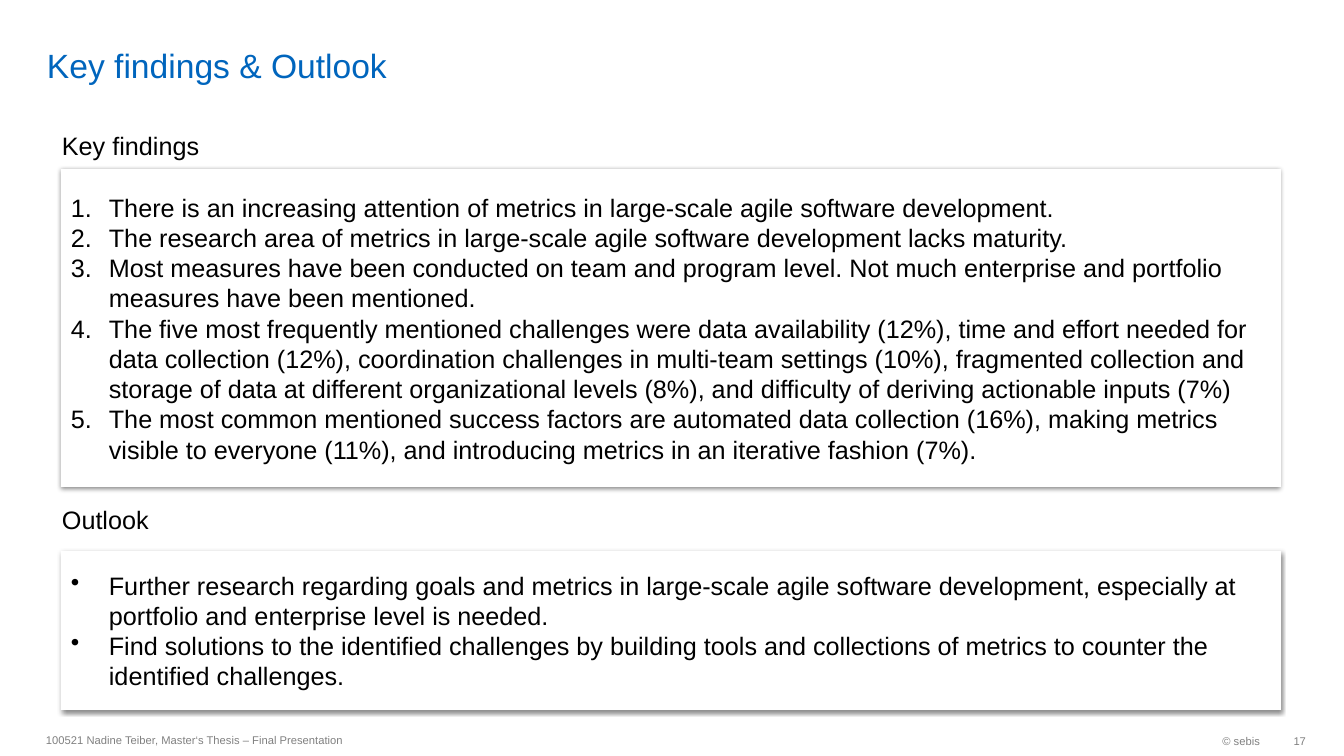
"""Build the key findings and outlook slide of a thesis presentation."""
from pptx import Presentation
from pptx.dml.color import RGBColor
from pptx.enum.shapes import MSO_SHAPE
from pptx.enum.text import MSO_ANCHOR, PP_ALIGN
from pptx.oxml import parse_xml
from pptx.oxml.ns import nsdecls, qn
from pptx.util import Emu, Pt

PIXEL = 914400 / 100.8
HANGING = 38
SHADOW = (
    f'<a:outerShdw {nsdecls("a")} blurRad="44450" dist="13970" dir="5400000" '
    'algn="t" rotWithShape="0">'
    '<a:srgbClr val="000000"><a:alpha val="45000"/></a:srgbClr></a:outerShdw>'
)
NUMBERS = f'<a:buAutoNum {nsdecls("a")} type="arabicPeriod"/>'
DOTS = f'<a:buChar {nsdecls("a")} char="•"/>'


def px(*lengths):
    return [Emu(round(length * PIXEL)) for length in lengths]


def style(para, size, color, align=PP_ALIGN.LEFT):
    para.alignment = align
    para.font.name = "Arial"
    para.font.size = Pt(size)
    para.font.color.rgb = RGBColor.from_string(color)


deck = Presentation()
deck.slide_width, deck.slide_height = px(1344, 756)
page = deck.slides.add_slide(deck.slide_layouts[6])

panels = [
    (169, 318, NUMBERS, [
        "There is an increasing attention of metrics in large-scale agile software development.",
        "The research area of metrics in large-scale agile software development lacks maturity.",
        "Most measures have been conducted on team and program level. Not much enterprise and "
        "portfolio measures have been mentioned.",
        "The five most frequently mentioned challenges were data availability (12%), time and "
        "effort needed for data collection (12%), coordination challenges in multi-team settings "
        "(10%), fragmented collection and storage of data at different organizational levels (8%), "
        "and difficulty of deriving actionable inputs (7%)",
        "The most common mentioned success factors are automated data collection (16%), making "
        "metrics visible to everyone (11%), and introducing metrics in an iterative fashion (7%).",
    ]),
    (551, 159, DOTS, [
        "Further research regarding goals and metrics in large-scale agile software development, "
        "especially at portfolio and enterprise level is needed.",
        "Find solutions to the identified challenges by building tools and collections of metrics "
        "to counter the identified challenges.",
    ]),
]
for top, height, bullet, items in panels:
    panel = page.shapes.add_shape(MSO_SHAPE.RECTANGLE, *px(61, top, 1220, height))
    panel.fill.solid()
    panel.fill.fore_color.rgb = RGBColor.from_string("FFFFFF")
    panel.line.fill.background()
    panel.shadow.inherit = False
    panel.element.spPr.find(qn("a:effectLst")).append(parse_xml(SHADOW))
    frame = panel.text_frame
    frame.vertical_anchor = MSO_ANCHOR.MIDDLE
    frame.text = "\n".join(items)
    for para in frame.paragraphs:
        properties = para._p.get_or_add_pPr()
        indent = px(HANGING)[0]
        properties.set("marL", str(indent))
        properties.set("indent", str(-indent))
        properties.append(parse_xml(bullet))
        style(para, 18, "000000")

TOP, MIDDLE, BOTTOM = MSO_ANCHOR.TOP, MSO_ANCHOR.MIDDLE, MSO_ANCHOR.BOTTOM
LEFT, RIGHT = PP_ALIGN.LEFT, PP_ALIGN.RIGHT
labels = [
    ("Key findings & Outlook", (37, 5, 1167, 80), (10, 0, 10, 0), BOTTOM, LEFT, 24, "0065BD"),
    ("Key findings", (52, 125, 461, 40), (10, 5, 10, 5), TOP, LEFT, 18, "000000"),
    ("Outlook", (52, 499, 461, 40), (10, 5, 10, 5), TOP, LEFT, 18, "000000"),
    ("100521 Nadine Teiber, Master‘s Thesis – Final Presentation",
     (36, 724, 635, 32), (10, 5, 10, 5), MIDDLE, LEFT, 8, "808080"),
    ("© sebis", (1034, 725, 236, 32), (10, 5, 10, 5), MIDDLE, RIGHT, 8, "808080"),
    ("17", (1270, 725, 36, 32), (10, 5, 0, 5), MIDDLE, RIGHT, 8, "808080"),
]
for text, place, insets, anchor, align, size, color in labels:
    frame = page.shapes.add_textbox(*px(*place)).text_frame
    frame.word_wrap = True
    frame.vertical_anchor = anchor
    (frame.margin_left, frame.margin_top,
     frame.margin_right, frame.margin_bottom) = px(*insets)
    frame.text = text
    style(frame.paragraphs[0], size, color, align)

deck.save("out.pptx")
